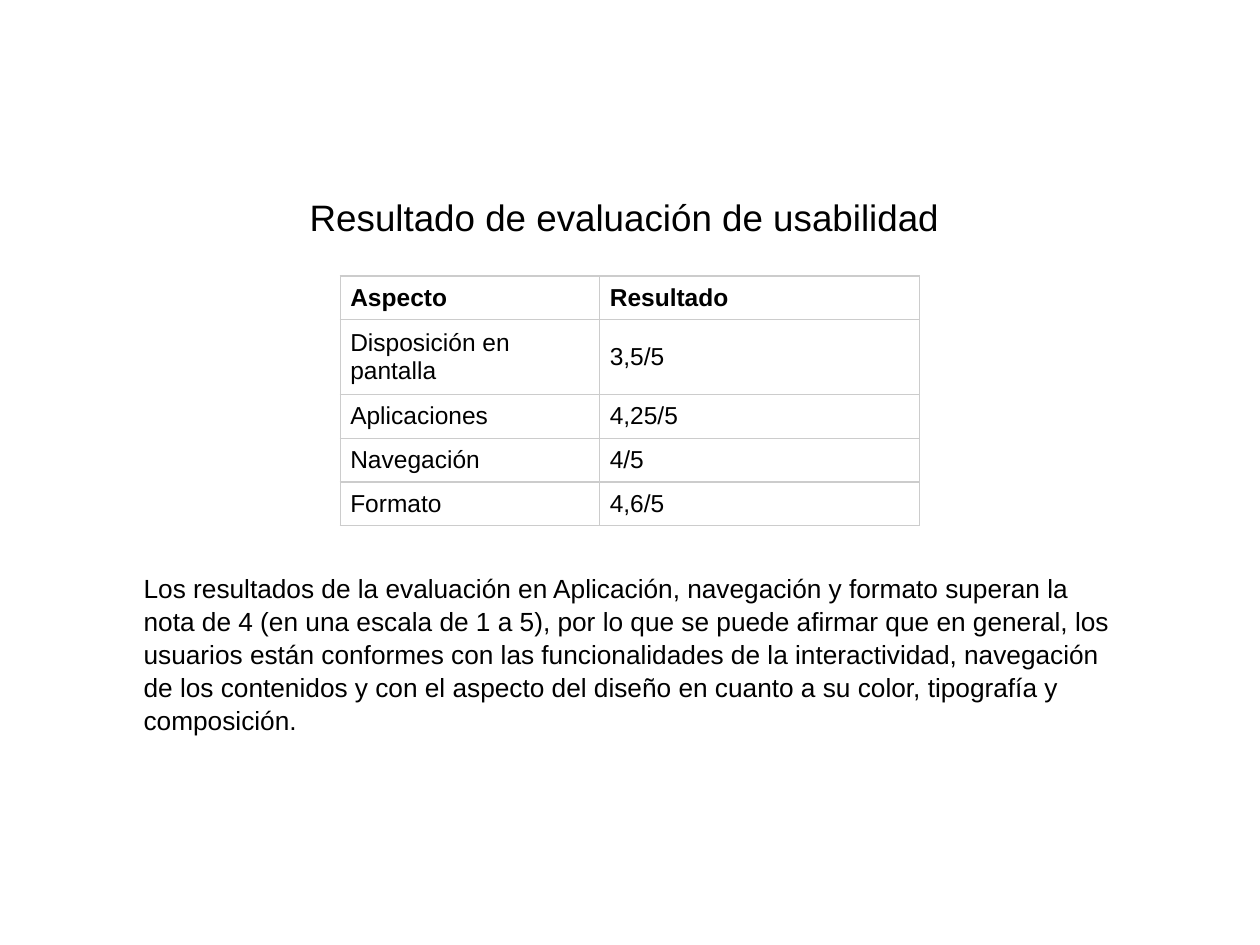
from dataclasses import dataclass

from lxml.etree import SubElement
from pptx import Presentation
from pptx.dml.color import RGBColor
from pptx.enum.text import MSO_ANCHOR as Anchor, PP_ALIGN as Align
from pptx.oxml.ns import qn
from pptx.util import Inches, Pt

WIDTH, HEIGHT = Inches(10), Inches(7.5)


def color(value):
    return RGBColor.from_string(value)


def across(share):
    return round(WIDTH * share / 100)


def down(share):
    return round(HEIGHT * share / 100)


@dataclass
class UsabilitySlide:
    slide: object
    font: str = "Arial"
    ink: str = "000000"
    grid: str = "CCCCCC"
    grid_width: float = 0.75

    def style(self, paragraph, size, bold=False):
        paragraph.font.name = self.font
        paragraph.font.size = Pt(size)
        paragraph.font.bold = bold
        paragraph.font.color.rgb = color(self.ink)

    def text(self, wording, left, top, width, height, size,
             align=Align.LEFT, anchor=Anchor.TOP, spacing=1.0):
        frame = self.slide.shapes.add_textbox(
            across(left), down(top), across(width), down(height)).text_frame
        frame.word_wrap = True
        frame.vertical_anchor = anchor
        frame.margin_left = frame.margin_right = Inches(0.07)
        frame.margin_top = frame.margin_bottom = Inches(0.04)
        paragraph = frame.paragraphs[0]
        paragraph.text = wording
        paragraph.alignment = align
        paragraph.line_spacing = spacing
        self.style(paragraph, size)

    def border(self, cell):
        properties = cell._tc.get_or_add_tcPr()
        for position, side in enumerate(("lnL", "lnR", "lnT", "lnB")):
            line = SubElement(properties, qn(f"a:{side}"), w=str(Pt(self.grid_width)))
            fill = SubElement(line, qn("a:solidFill"))
            SubElement(fill, qn("a:srgbClr"), val=self.grid)
            properties.insert(position, line)

    def table(self, records, left, top, column_shares, row_shares, size):
        table = self.slide.shapes.add_table(
            len(row_shares), len(column_shares), across(left), down(top),
            across(sum(column_shares)), down(sum(row_shares))).table
        table.first_row = table.horz_banding = False
        for column, share in zip(table.columns, column_shares):
            column.width = across(share)
        for index, (row, share, record) in enumerate(zip(table.rows, row_shares, records)):
            row.height = down(share)
            for cell, wording in zip(row.cells, record):
                cell.text = wording
                cell.vertical_anchor = Anchor.MIDDLE
                cell.margin_left = cell.margin_right = Inches(0.08)
                cell.margin_top = cell.margin_bottom = Inches(0.04)
                cell.fill.background()
                self.border(cell)
                self.style(cell.text_frame.paragraphs[0], size, bold=index == 0)


def main():
    deck = Presentation()
    deck.slide_width, deck.slide_height = WIDTH, HEIGHT
    usability = UsabilitySlide(deck.slides.add_slide(deck.slide_layouts[6]))
    usability.slide.background.fill.solid()
    usability.slide.background.fill.fore_color.rgb = color("FFFFFF")

    usability.text("Resultado de evaluación de usabilidad", 6.3, 17.33, 86.5, 11.87,
                   21, Align.CENTER, Anchor.MIDDLE, 0.9)

    results = [
        ("Aspecto", "Resultado"),
        ("Disposición en pantalla", "3,5/5"),
        ("Aplicaciones", "4,25/5"),
        ("Navegación", "4/5"),
        ("Formato", "4,6/5"),
    ]
    single, double = 4.65, 7.87
    usability.table(results, 27, 29.2, (20.6, 25.4),
                    (single, double, single, single, single), 14)

    conclusion = (
        "Los resultados de la evaluación en Aplicación, navegación y formato superan la "
        "nota de 4 (en una escala de 1 a 5), por lo que se puede afirmar que en general, "
        "los usuarios están conformes con las funcionalidades de la interactividad, "
        "navegación de los contenidos y con el aspecto del diseño en cuanto a su color, "
        "tipografía y composición."
    )
    usability.text(conclusion, 10.7, 59.87, 78.7, 17.87, 15, spacing=1.05)
    deck.save("out.pptx")


if __name__ == "__main__":
    main()
